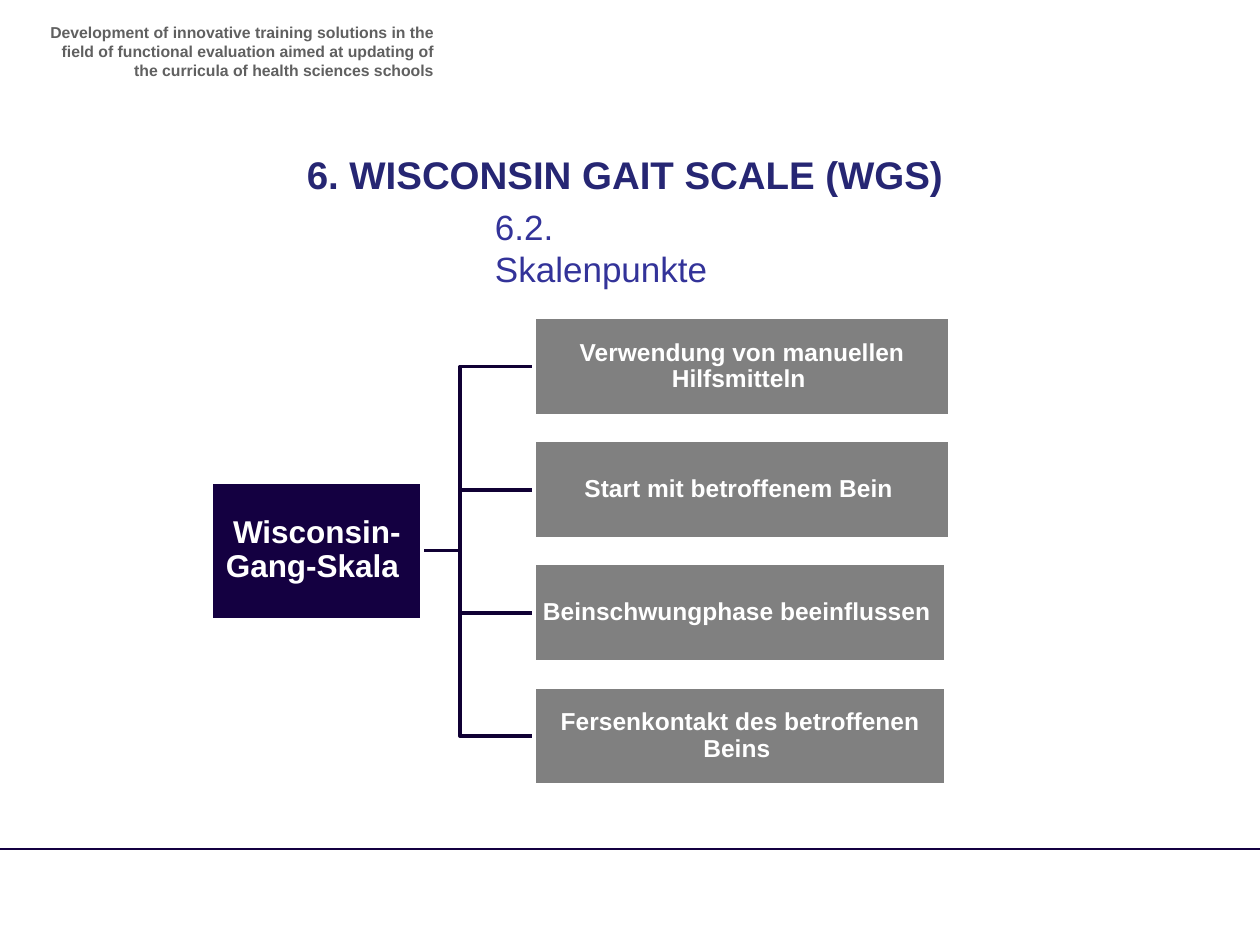
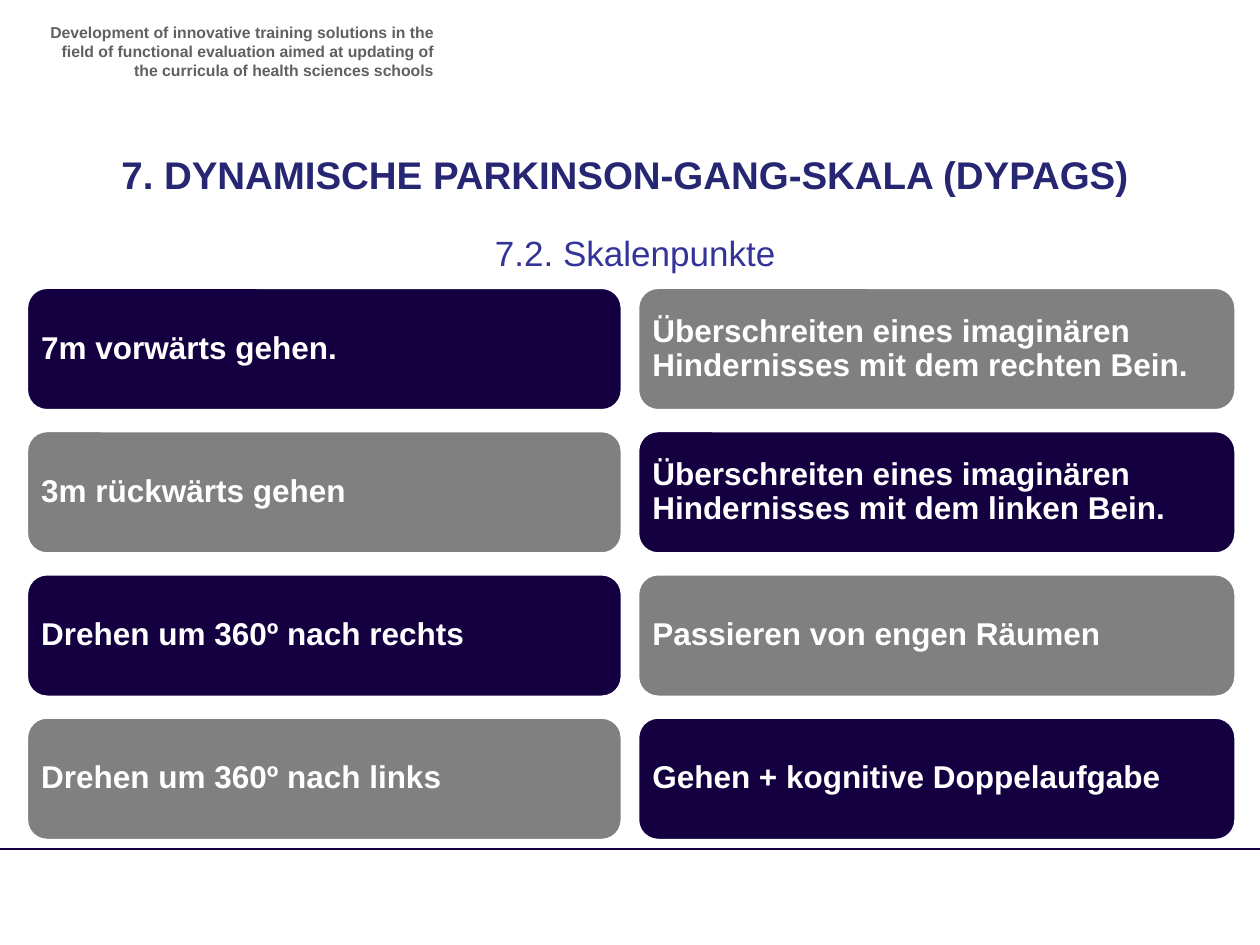
"""Build two German slides on the items of gait assessment scales."""
import pptx
import pptx.dml.color
import pptx.enum.shapes
import pptx.enum.text
import pptx.oxml.ns
import pptx.util
from lxml import etree

SHAPE = pptx.enum.shapes.MSO_SHAPE
ALIGN = pptx.enum.text.PP_ALIGN
ANCHOR = pptx.enum.text.MSO_ANCHOR
COLUMNS, ROWS = 100, 75
NAVY, GRAY, WHITE = "140041", "808080", "FFFFFF"
HEADER = ("Development of innovative training solutions in the ﬁeld of functional "
          "evaluation aimed at updating of the curricula of health sciences schools")


def rgb(code):
    return pptx.dml.color.RGBColor.from_string(code)


def write(frame, text, size=18, color=WHITE, bold=True, align=ALIGN.LEFT,
          anchor=ANCHOR.TOP, inset=None, spacing=None):
    frame.word_wrap = True
    frame.auto_size = pptx.enum.text.MSO_AUTO_SIZE.NONE
    frame.vertical_anchor = anchor
    if inset is not None:
        frame.margin_left = frame.margin_right = pptx.util.Inches(inset)
        frame.margin_top = frame.margin_bottom = pptx.util.Inches(inset)
    paragraph = frame.paragraphs[0]
    paragraph.text = text
    paragraph.alignment = align
    paragraph.line_spacing = spacing
    font = paragraph.font
    font.name, font.size, font.bold = "Arial", pptx.util.Pt(size), bold
    font.color.rgb = rgb(color)


class Deck:
    def __init__(self):
        self.show = pptx.Presentation()
        self.show.slide_width = pptx.util.Inches(10)
        self.show.slide_height = pptx.util.Inches(7.5)
        self.slide = None

    def x(self, column):
        return round(self.show.slide_width * column / COLUMNS)

    def y(self, row):
        return round(self.show.slide_height * row / ROWS)

    def place(self, column, row, width, height):
        return self.x(column), self.y(row), self.x(width), self.y(height)

    def start(self, heading, subheading, subheading_row, subheading_width):
        self.slide = self.show.slides.add_slide(self.show.slide_layouts[5])
        self.rule(67.4)
        self.label(HEADER, 2.8, 1.3, 32.6, 4.7, size=9, color="606060", align=ALIGN.RIGHT)
        title = self.slide.shapes.title
        title.left, title.top, title.width, title.height = self.place(6.7, 11.5, 85.8, 4.7)
        write(title.text_frame, heading, size=22, color="262673", align=ALIGN.CENTER)
        self.label(subheading, 38.3, subheading_row, subheading_width, 7.7,
                   size=20, color="333399", bold=False)

    def rule(self, row):
        line = self.slide.shapes.add_connector(
            pptx.enum.shapes.MSO_CONNECTOR.STRAIGHT,
            0, self.y(row), self.x(COLUMNS), self.y(row))
        line.line.color.rgb = rgb(NAVY)
        line.line.width = pptx.util.Pt(1)
        etree.SubElement(line._element.spPr, pptx.oxml.ns.qn("a:effectLst"))

    def label(self, text, column, row, width, height, **style):
        box = self.slide.shapes.add_textbox(*self.place(column, row, width, height))
        write(box.text_frame, text, **style)

    def block(self, kind, text, column, row, width, height, fill, **style):
        block = self.slide.shapes.add_shape(kind, *self.place(column, row, width, height))
        block.shadow.inherit = False
        block.fill.solid()
        block.fill.fore_color.rgb = rgb(fill)
        block.line.color.rgb = rgb(WHITE)
        block.line.width = pptx.util.Pt(2)
        write(block.text_frame, text, anchor=ANCHOR.MIDDLE, spacing=0.9, **style)

    def branch(self, *points):
        corners = [(self.x(column), self.y(row)) for column, row in points]
        builder = self.slide.shapes.build_freeform(*corners[0])
        builder.add_line_segments(corners[1:], close=False)
        branch = builder.convert_to_shape()
        branch.shadow.inherit = False
        branch.fill.background()
        branch.line.color.rgb = rgb("100034")
        branch.line.width = pptx.util.Pt(2)


def wisconsin(deck):
    deck.start("6. WISCONSIN GAIT SCALE (WGS)", "6.2. Skalenpunkte", 15.8, 23.4)
    items = [("Verwendung von manuellen Hilfsmitteln ", 33),
             ("Start mit betroffenem Bein ", 33),
             ("Beinschwungphase beeinflussen ", 32.7),
             ("Fersenkontakt des betroffenen Beins ", 32.7)]
    left, top, height, pitch = 42.4, 25.2, 7.8, 9.77
    hub_row, fork = 43.7, 36.5
    centers = [top + height / 2 + pitch * index for index in range(len(items))]
    for center in reversed(centers):
        deck.branch((30.6, hub_row), (fork, hub_row), (fork, center), (left, center))
    style = dict(align=ALIGN.CENTER, inset=0.01)
    deck.block(SHAPE.RECTANGLE, "Wisconsin-Gang-Skala ", 16.8, hub_row - 5.45, 16.7, 10.9,
               NAVY, **style)
    for (item, width), center in zip(items, centers):
        deck.block(SHAPE.RECTANGLE, item, left, center - height / 2, width, height,
                   GRAY, size=14, **style)


def parkinson(deck):
    deck.start("7. DYNAMISCHE PARKINSON-GANG-SKALA (DYPAGS)", "7.2. Skalenpunkte", 17.9, 31.4)
    tasks = [(2.1, 47.3, ["7m vorwärts gehen.", "3m rückwärts gehen",
                          "Drehen um 360º nach rechts", "Drehen um 360º nach links"]),
             (50.6, 47.5, ["Überschreiten eines imaginären Hindernisses mit dem rechten Bein.",
                           "Überschreiten eines imaginären Hindernisses mit dem linken Bein.",
                           "Passieren von engen Räumen",
                           "Gehen + kognitive Doppelaufgabe"])]
    for side, (left, width, names) in enumerate(tasks):
        for index, name in enumerate(names):
            deck.block(SHAPE.ROUNDED_RECTANGLE, name, left, 22.8 + 11.37 * index, width, 9.8,
                       (NAVY, GRAY)[(side + index) % 2], inset=0.07)


def main():
    deck = Deck()
    wisconsin(deck)
    parkinson(deck)
    deck.show.save("out.pptx")


if __name__ == "__main__":
    main()
